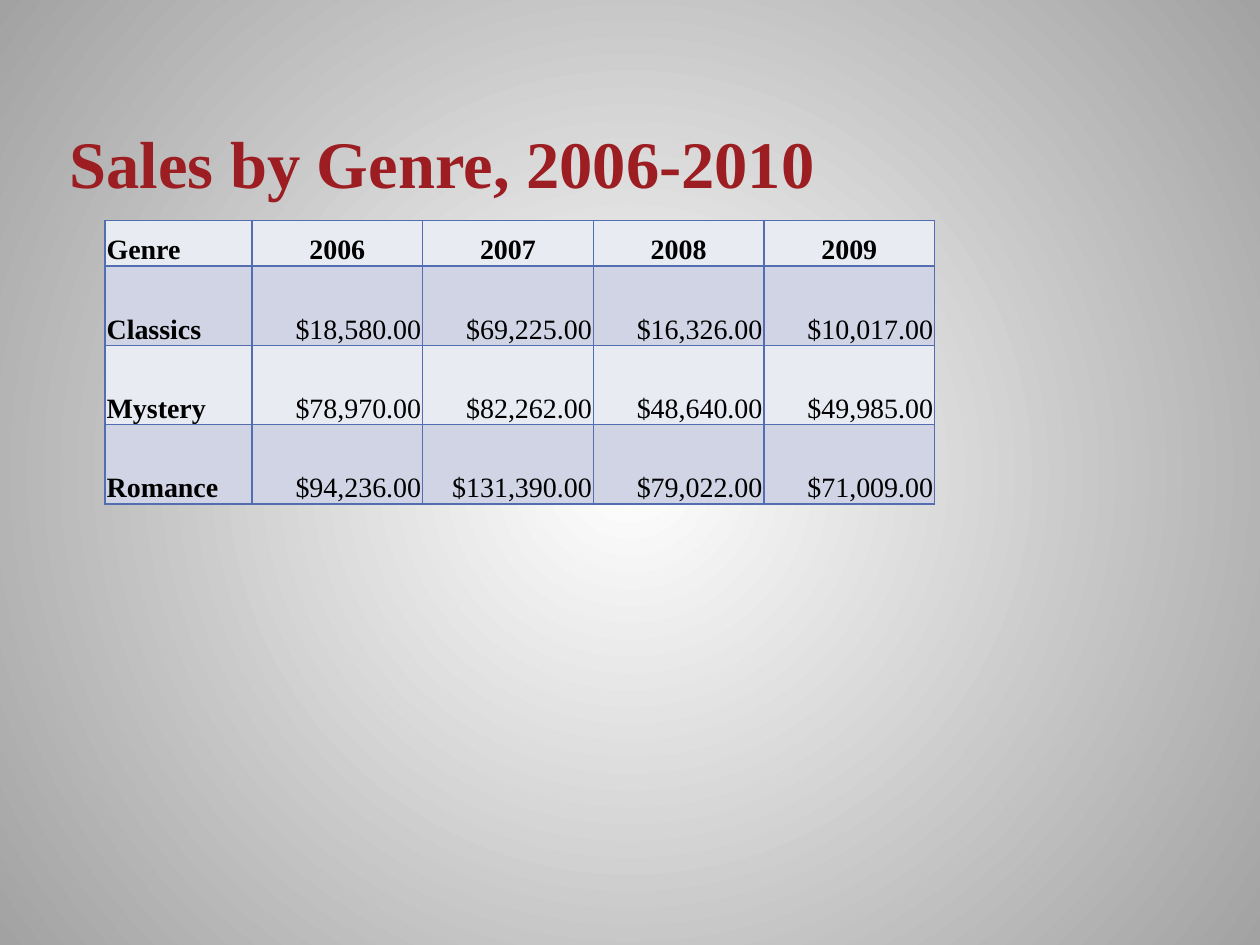
from lxml.etree import SubElement
from pptx import Presentation
from pptx.dml.color import RGBColor
from pptx.enum.text import MSO_ANCHOR, PP_ALIGN
from pptx.oxml import parse_xml
from pptx.oxml.ns import nsdecls, qn
from pptx.util import Cm, Pt

FONT = "Times New Roman"
BLACK = RGBColor(0x00, 0x00, 0x00)
WHITE = RGBColor(0xFF, 0xFF, 0xFF)
GREY = RGBColor(0xA2, 0xA2, 0xA2)
RED = RGBColor(0x9D, 0x1E, 0x22)
BORDER = RGBColor(0x52, 0x6D, 0xB0)
BANDS = (RGBColor(0xE9, 0xEB, 0xF2), RGBColor(0xD1, 0xD4, 0xE4))

SALES = [
    ("Genre", "2006", "2007", "2008", "2009"),
    ("Classics", "$18,580.00", "$69,225.00", "$16,326.00", "$10,017.00"),
    ("Mystery", "$78,970.00", "$82,262.00", "$48,640.00", "$49,985.00"),
    ("Romance", "$94,236.00", "$131,390.00", "$79,022.00", "$71,009.00"),
]


def write(tf, text, size=16, color=BLACK, bold=False, align=PP_ALIGN.LEFT):
    p = tf.paragraphs[0]
    p.alignment = align
    r = p.add_run()
    r.text = text
    r.font.name = FONT
    r.font.size = Pt(size)
    r.font.bold = bold
    r.font.color.rgb = color


class SlideBuilder:
    def __init__(self, slide, font_color=BLACK, border_width=1):
        self.s = slide
        self.font_color = font_color
        self.border_width = border_width

    def background(self, center, edge):
        fill = self.s.background.fill
        fill.gradient()
        for stop, color, position in zip(fill.gradient_stops, (center, edge), (0, 1)):
            stop.color.rgb = color
            stop.position = position
        # Radial shading from the middle of the slide
        grad = self.s.element.find(".//" + qn("a:gradFill"))
        grad.replace(grad.find(qn("a:lin")), parse_xml(
            f'<a:path {nsdecls("a")} path="circle">'
            '<a:fillToRect l="50000" t="50000" r="50000" b="50000"/></a:path>'))

    def title(self, text, left, top, width, height):
        tf = self.s.shapes.add_textbox(left, top, width, height).text_frame
        tf.word_wrap = True
        tf.vertical_anchor = MSO_ANCHOR.BOTTOM
        tf.margin_left = tf.margin_right = Cm(0.13)
        tf.margin_top = tf.margin_bottom = 0
        write(tf, text, size=38, color=RED, bold=True)

    def table(self, rows, left, top, col_widths, row_heights):
        table = self.s.shapes.add_table(
            len(rows), len(rows[0]), left, top,
            sum(col_widths), sum(row_heights)).table
        table.first_row = table.horz_banding = False
        for column, width in zip(table.columns, col_widths):
            column.width = width
        for i, (values, height) in enumerate(zip(rows, row_heights)):
            table.rows[i].height = height
            for j, text in enumerate(values):
                self.cell(table.cell(i, j), text, i, j)

    def cell(self, cell, text, row, col):
        cell.vertical_anchor = MSO_ANCHOR.BOTTOM
        cell.margin_left = cell.margin_right = cell.margin_top = Cm(0.03)
        cell.margin_bottom = 0
        self.borders(cell)
        cell.fill.solid()
        cell.fill.fore_color.rgb = BANDS[row % 2]
        if col == 0:
            align = PP_ALIGN.LEFT
        else:
            align = PP_ALIGN.CENTER if row == 0 else PP_ALIGN.RIGHT
        write(cell.text_frame, text, color=self.font_color,
              bold=row == 0 or col == 0, align=align)

    def borders(self, cell):
        tc_pr = cell._tc.get_or_add_tcPr()
        for side in ("a:lnL", "a:lnR", "a:lnT", "a:lnB"):
            line = SubElement(tc_pr, qn(side), w=str(Pt(self.border_width)))
            fill = SubElement(line, qn("a:solidFill"))
            SubElement(fill, qn("a:srgbClr"), val=str(BORDER))


def main():
    prs = Presentation()
    prs.slide_width, prs.slide_height = Cm(25.4), Cm(19.05)
    builder = SlideBuilder(prs.slides.add_slide(prs.slide_layouts[6]))

    # Background and title
    builder.background(WHITE, GREY)
    builder.title("Sales by Genre, 2006-2010", Cm(1.27), Cm(0.89), Cm(20.12), Cm(3.18))

    # Sales table
    builder.table(SALES, Cm(2.12), Cm(4.45),
                  col_widths=[Cm(2.96)] + [Cm(3.44)] * 4,
                  row_heights=[Cm(0.91)] + [Cm(1.6)] * 3)

    prs.save("out.pptx")


if __name__ == "__main__":
    main()
